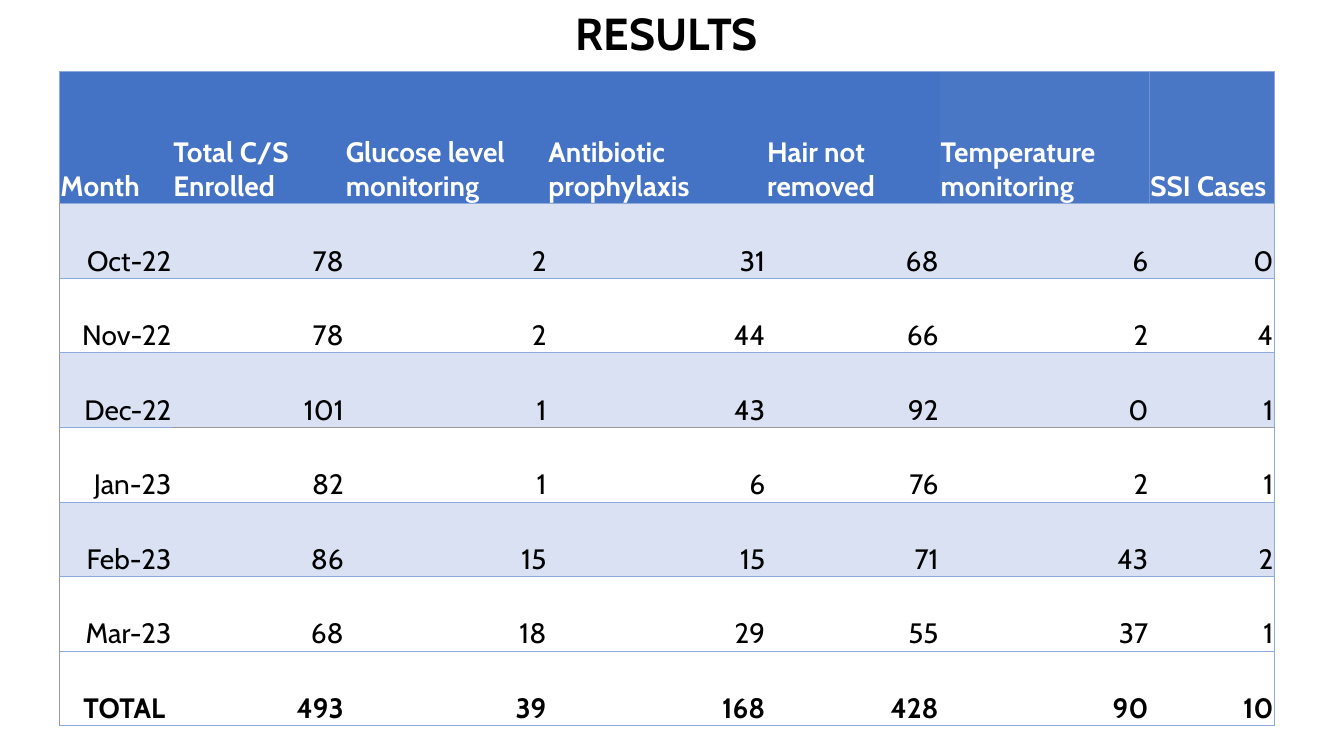
from dataclasses import dataclass

from lxml import etree
from pptx import Presentation
from pptx import util as u
from pptx.dml.color import RGBColor
from pptx.enum import text
from pptx.oxml.ns import qn


@dataclass(frozen=True)
class Theme:
    font: str = "Cabin"
    title_size: int = 32
    body_size: int = 20
    ink: str = "000000"
    header_ink: str = "FFFFFF"
    header: str = "4472C4"
    band: str = "D9E1F2"
    rule: str = "8EA9DB"
    grey_rule: str = "999999"
    rule_width: float = 0.5


THEME = Theme()
SLIDE_W, SLIDE_H = 13.33, 7.5
TABLE_LEFT, TABLE_TOP = 0.59, 0.71
COLUMN_WIDTHS = [1.12, 1.71, 2.01, 2.17, 1.72, 2.08, 1.24]
HEADER_H, MONTH_H = 1.31, 0.74
TRANSLUCENT_FROM = 5  # first heading column with a slightly transparent fill

RESULTS = [
    ["Month", "Total C/S Enrolled", "Glucose level monitoring",
     "Antibiotic prophylaxis", "Hair not removed",
     "Temperature monitoring", "SSI Cases"],
    ["Oct-22", 78, 2, 31, 68, 6, 0],
    ["Nov-22", 78, 2, 44, 66, 2, 4],
    ["Dec-22", 101, 1, 43, 92, 0, 1],
    ["Jan-23", 82, 1, 6, 76, 2, 1],
    ["Feb-23", 86, 15, 15, 71, 43, 2],
    ["Mar-23", 68, 18, 29, 55, 37, 1],
    ["TOTAL ", 493, 39, 168, 428, 90, 10],
]
TOTAL_ROW = len(RESULTS) - 1
LAST_COLUMN = len(COLUMN_WIDTHS) - 1
GREY_RULE_ROW = 3  # the rule below this month is grey, except under its name


def write(frame, words, *, size, color, bold=False,
          align=text.PP_ALIGN.LEFT, spacing=None):
    paragraph = frame.paragraphs[0]
    paragraph.alignment = align
    paragraph.line_spacing = spacing
    run = paragraph.add_run()
    run.text = str(words)
    run.font.name = THEME.font
    run.font.size = u.Pt(size)
    run.font.bold = bold
    run.font.color.rgb = RGBColor.from_string(color)


def add_title(slide, words):
    margin = (SLIDE_W - 11.5) / 2
    box = slide.shapes.add_textbox(u.Inches(margin), 0, u.Inches(11.5),
                                   u.Inches(TABLE_TOP))
    frame = box.text_frame
    frame.word_wrap = True
    frame.vertical_anchor = text.MSO_ANCHOR.MIDDLE
    write(frame, words, size=THEME.title_size, color=THEME.ink, bold=True,
          align=text.PP_ALIGN.CENTER, spacing=0.9)


def cell_rules(row, column):
    """Return the border colour of each ruled side, in schema order."""
    rules = {}
    if column == 0:
        rules["L"] = THEME.grey_rule if row else THEME.rule
    if column == LAST_COLUMN:
        rules["R"] = THEME.rule
    for side, row_above in (("T", row - 1), ("B", row)):
        grey = row_above == GREY_RULE_ROW and column > 0
        rules[side] = THEME.grey_rule if grey else THEME.rule
    return rules


def draw_rules(cell, rules):
    properties = cell._tc.get_or_add_tcPr()
    for side, color in rules.items():
        line = etree.SubElement(properties, qn(f"a:ln{side}"),
                                w=str(u.Pt(THEME.rule_width)))
        fill = etree.SubElement(line, qn("a:solidFill"))
        etree.SubElement(fill, qn("a:srgbClr"), val=color)


def paint(cell, color, opacity=100):
    cell.fill.solid()
    cell.fill.fore_color.rgb = RGBColor.from_string(color)
    if opacity < 100:
        tint = cell._tc.tcPr.find(f"{qn('a:solidFill')}/{qn('a:srgbClr')}")
        etree.SubElement(tint, qn("a:alpha"), val=str(opacity * 1000))


def fill_cell(cell, row, column, value):
    heading = row == 0
    cell.margin_left = cell.margin_right = cell.margin_top = u.Inches(0.01)
    cell.margin_bottom = 0
    cell.vertical_anchor = text.MSO_ANCHOR.BOTTOM
    draw_rules(cell, cell_rules(row, column))
    if heading:
        paint(cell, THEME.header, 97 if column >= TRANSLUCENT_FROM else 100)
    elif row % 2 and row != TOTAL_ROW:
        paint(cell, THEME.band)
    else:
        cell.fill.background()
    write(cell.text_frame, value, size=THEME.body_size,
          color=THEME.header_ink if heading else THEME.ink,
          bold=row in (0, TOTAL_ROW),
          align=text.PP_ALIGN.LEFT if heading else text.PP_ALIGN.RIGHT)


def add_results_table(slide):
    heights = [HEADER_H] + [MONTH_H] * TOTAL_ROW
    table = slide.shapes.add_table(
        len(heights), len(COLUMN_WIDTHS), u.Inches(TABLE_LEFT),
        u.Inches(TABLE_TOP), u.Inches(sum(COLUMN_WIDTHS)),
        u.Inches(sum(heights))).table
    table.horz_banding = False
    style = table._tbl.tblPr.find(qn("a:tableStyleId"))
    style.text = "{2D5ABB26-0587-4C30-8999-92F81FD0307C}"  # no style, no grid
    for column, width in zip(table.columns, COLUMN_WIDTHS):
        column.width = u.Inches(width)
    for row, height in zip(table.rows, heights):
        row.height = u.Inches(height)
    for row, values in enumerate(RESULTS):
        for column, value in enumerate(values):
            fill_cell(table.cell(row, column), row, column, value)


def main():
    deck = Presentation()
    deck.slide_width = u.Inches(SLIDE_W)
    deck.slide_height = u.Inches(SLIDE_H)
    slide = deck.slides.add_slide(deck.slide_layouts[6])
    add_title(slide, "RESULTS ")
    add_results_table(slide)
    deck.save("out.pptx")


if __name__ == "__main__":
    main()
